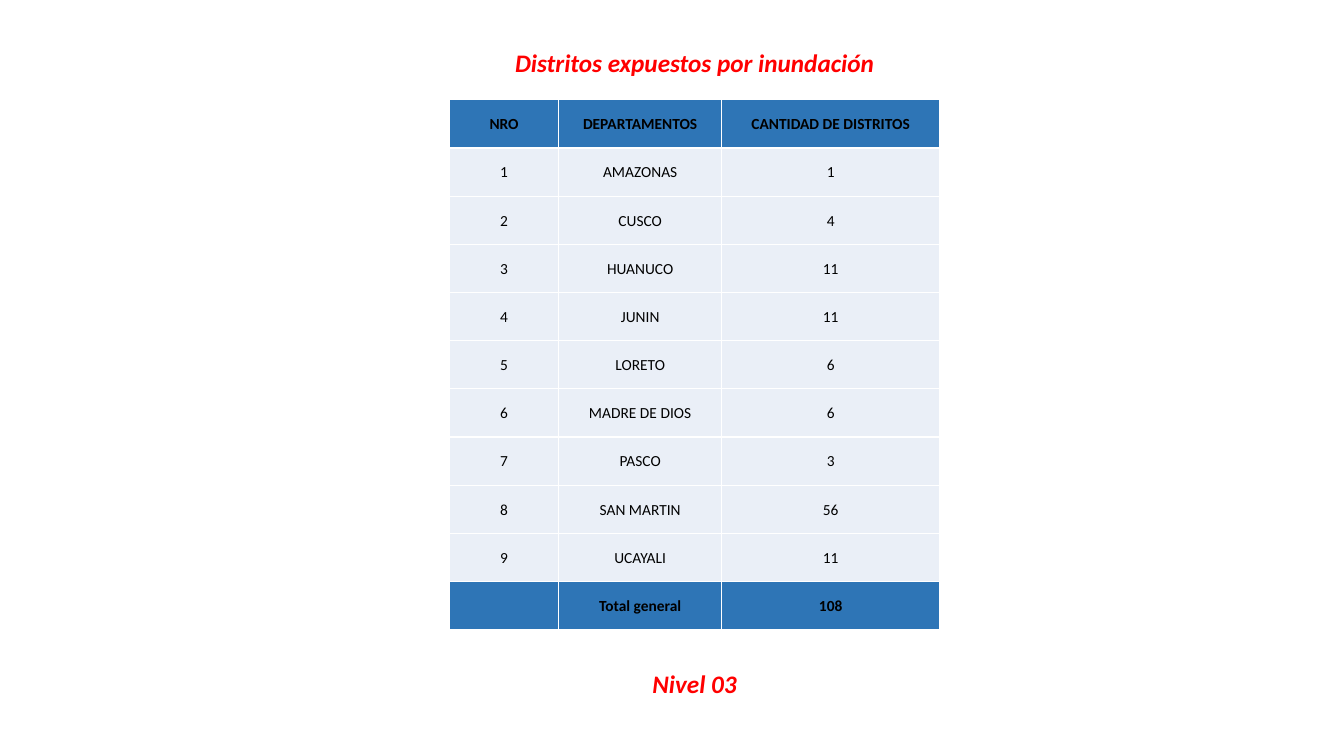
from lxml import etree
from pptx import Presentation
from pptx.dml.color import RGBColor
from pptx.enum.text import MSO_ANCHOR, MSO_AUTO_SIZE, PP_ALIGN
from pptx.oxml.ns import qn
from pptx.util import Inches, Pt

CENTER, MIDDLE = PP_ALIGN.CENTER, MSO_ANCHOR.MIDDLE
GROW = MSO_AUTO_SIZE.SHAPE_TO_FIT_TEXT
TITLE_ONLY = 5

COLORS = {"accent": "FF0000", "head": "2E75B6", "body": "EAEFF7",
          "text": "000000", "border": "FFFFFF"}
FONT = "Calibri"

# Grid: starts at the table's corner, one row per table row
LEFT, TOP = 4.46, 0.99
COL, ROW = 0.27, 5.26 / 11

HEADER = ("NRO", "DEPARTAMENTOS", "CANTIDAD DE DISTRITOS")
DISTRICTS = {"AMAZONAS": 1, "CUSCO": 4, "HUANUCO": 11, "JUNIN": 11, "LORETO": 6,
             "MADRE DE DIOS": 6, "PASCO": 3, "SAN MARTIN": 56, "UCAYALI": 11}
TOTAL = ("", "Total general", "108")


class SlideBuilder:
    def __init__(self, s):
        self.s = s

    def box(self, col, row, cols, rows):
        return (Inches(LEFT + col * COL), Inches(TOP + row * ROW),
                Inches(cols * COL), Inches(rows * ROW))

    def run(self, p, text, size, color, bold=False, italic=False):
        p.alignment = CENTER
        r = p.add_run()
        r.text = text
        r.font.name, r.font.size = FONT, Pt(size)
        r.font.bold, r.font.italic = bold, italic
        r.font.color.rgb = RGBColor.from_string(COLORS[color])

    def caption(self, sp, text, wrap):
        tf = sp.text_frame
        tf.word_wrap, tf.auto_size = wrap, GROW
        self.run(tf.paragraphs[0], text, 18, "accent", bold=True, italic=True)

    def title(self, text, *place):
        sp = self.s.shapes.title
        sp.left, sp.top, sp.width, sp.height = self.box(*place)
        self.caption(sp, text, wrap=False)

    def label(self, text, *place):
        self.caption(self.s.shapes.add_textbox(*self.box(*place)), text, wrap=True)

    def borders(self, cell):
        tcPr = cell._tc.get_or_add_tcPr()
        for side in ("a:lnL", "a:lnR", "a:lnT", "a:lnB"):
            ln = etree.SubElement(tcPr, qn(side), w=str(Pt(1)))
            fill = etree.SubElement(ln, qn("a:solidFill"))
            etree.SubElement(fill, qn("a:srgbClr"), val=COLORS["border"])

    def cell(self, cell, text, strong):
        self.borders(cell)
        cell.fill.solid()
        cell.fill.fore_color.rgb = RGBColor.from_string(
            COLORS["head" if strong else "body"])
        cell.vertical_anchor = MIDDLE
        cell.margin_left = cell.margin_right = cell.margin_top = Inches(0.01)
        cell.margin_bottom = 0
        if text:
            self.run(cell.text_frame.paragraphs[0], text, 11, "text", bold=strong)

    def table(self, rows, spans):
        place = self.box(0, 0, sum(spans), len(rows))
        table = self.s.shapes.add_table(len(rows), len(spans), *place).table
        table.first_row = table.horz_banding = False
        for column, span in zip(table.columns, spans):
            column.width = Inches(span * COL)
        for i, row in enumerate(rows):
            table.rows[i].height = Inches(ROW)
            for j, text in enumerate(row):
                self.cell(table.cell(i, j), text, strong=i in (0, len(rows) - 1))


def main():
    prs = Presentation()
    prs.slide_width, prs.slide_height = Inches(13.33), Inches(7.5)
    slide = SlideBuilder(prs.slides.add_slide(prs.slide_layouts[TITLE_ONLY]))

    # Heading
    slide.title("Distritos expuestos por inundación", 2, -1.19, 14, 0.84)

    # Level below the table
    slide.label("Nivel 03", 6.8, 11.69, 4.4, 0.84)

    # Districts per department
    body = [(str(n), name, str(count))
            for n, (name, count) in enumerate(DISTRICTS.items(), 1)]
    slide.table([HEADER, *body, TOTAL], spans=(4, 6, 8))

    prs.save("out.pptx")


if __name__ == "__main__":
    main()
